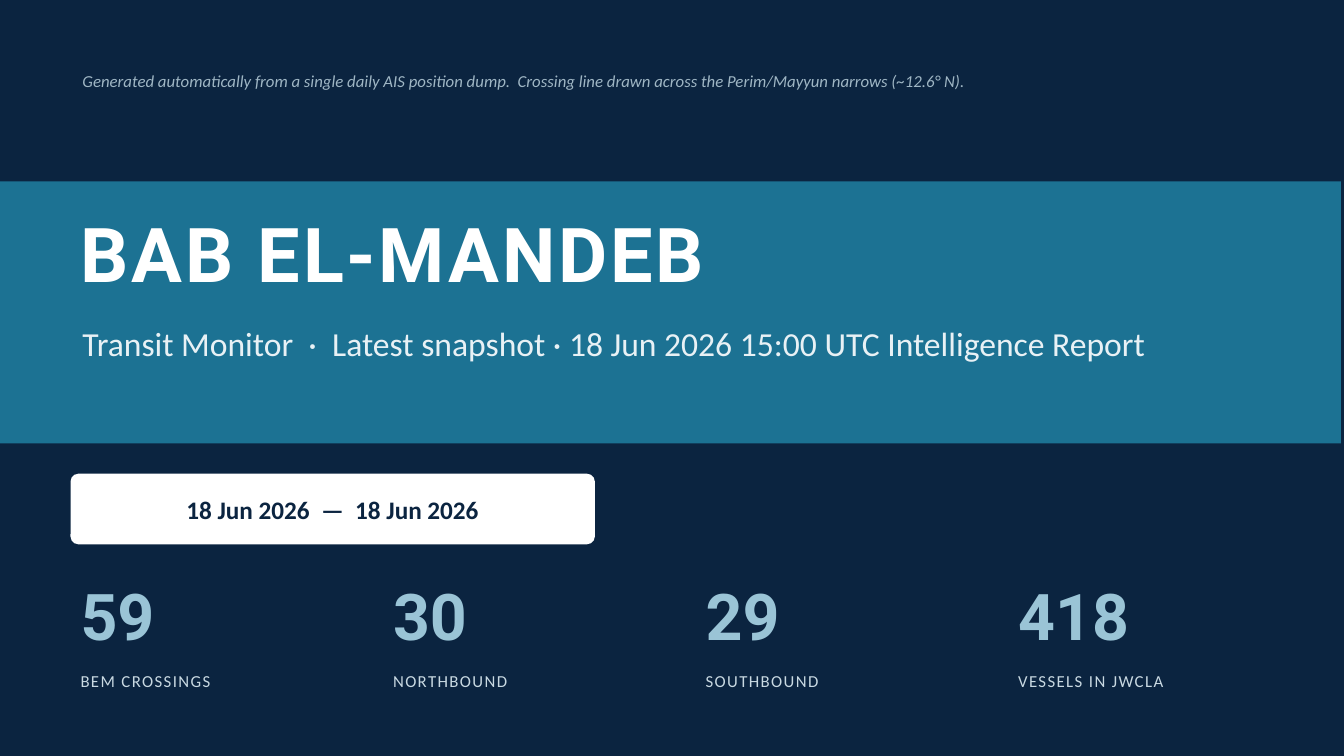
from pptx import Presentation
from pptx.dml.color import RGBColor
from pptx.enum.shapes import MSO_SHAPE
from pptx.enum.text import MSO_ANCHOR, PP_ALIGN
from pptx.util import Pt

RECT = MSO_SHAPE.RECTANGLE
ROUND_RECT = MSO_SHAPE.ROUNDED_RECTANGLE
MIDDLE = MSO_ANCHOR.MIDDLE
LEFT, CENTER = PP_ALIGN.LEFT, PP_ALIGN.CENTER

PX = 9144  # EMU per px, 100 px to the inch
COLORS = {
    "navy": "0B2440",
    "teal": "1C7293",
    "white": "FFFFFF",
    "subtitle": "E8F1F5",
    "figure": "9AC4D6",
    "label": "C9D9E2",
    "note": "9FB6C4",
}
HEAD, BODY = "Roboto", "Calibri"

STATS = [
    ("59", "BEM CROSSINGS"),
    ("30", "NORTHBOUND"),
    ("29", "SOUTHBOUND"),
    ("418", "VESSELS IN JWCLA"),
]
STAT_LEFT, STAT_STEP, STAT_WIDTH = 70, 310, 285


def rgb(name):
    return RGBColor.from_string(COLORS[name])


class Cover:
    def __init__(self, prs):
        self.s = prs.slides.add_slide(prs.slide_layouts[6])
        fill = self.s.background.fill
        fill.solid()
        fill.fore_color.rgb = rgb("navy")

    def panel(self, kind, x, y, w, h, color):
        sp = self.s.shapes.add_shape(kind, x * PX, y * PX, w * PX, h * PX)
        sp.shadow.inherit = False
        sp.fill.solid()
        sp.fill.fore_color.rgb = rgb(color)
        sp.line.fill.background()
        return sp

    def label(self, sp, text, size, color, font=BODY, bold=False,
              italic=False, spacing=0, align=LEFT):
        """Put one styled line in a shape; spacing is in points."""
        tf = sp.text_frame
        tf.word_wrap = True
        tf.vertical_anchor = MIDDLE
        p = tf.paragraphs[0]
        p.alignment = align
        r = p.add_run()
        r.text = text
        r.font.name = font
        r.font.size = Pt(size)
        r.font.bold = bold
        r.font.italic = italic
        r.font.color.rgb = rgb(color)
        if spacing:
            r._r.get_or_add_rPr().set("spc", str(spacing * 100))

    def text(self, x, y, w, h, text, size, color, **style):
        sp = self.s.shapes.add_textbox(x * PX, y * PX, w * PX, h * PX)
        self.label(sp, text, size, color, **style)

    def stat(self, x, figure, caption):
        self.text(x, 565, STAT_WIDTH, 90, figure, 46, "figure",
                  font=HEAD, bold=True)
        self.text(x, 655, STAT_WIDTH, 40, caption, 12, "label", spacing=1)


def main():
    prs = Presentation()
    prs.slide_width, prs.slide_height = 1333 * PX, 750 * PX
    cover = Cover(prs)

    cover.panel(RECT, 0, 180, 1330, 260, "teal")
    cover.text(70, 195, 1190, 110, "BAB EL-MANDEB", 54, "white",
               font=HEAD, bold=True, spacing=2)
    cover.text(72, 305, 1190, 70,
               "Transit Monitor  ·  Latest snapshot · 18 Jun 2026 15:00 UTC "
               "Intelligence Report", 24, "subtitle")

    dates = cover.panel(ROUND_RECT, 70, 470, 520, 70, "white")
    dates.adjustments[0] = 0.11
    cover.label(dates, "18 Jun 2026  —  18 Jun 2026", 18, "navy",
                bold=True, align=CENTER)

    for i, (figure, caption) in enumerate(STATS):
        cover.stat(STAT_LEFT + i * STAT_STEP, figure, caption)

    cover.text(72, 55, 1190, 50,
               "Generated automatically from a single daily AIS position dump.  "
               "Crossing line drawn across the Perim/Mayyun narrows (~12.6° N).",
               12, "note", italic=True)

    prs.save("out.pptx")


if __name__ == "__main__":
    main()
